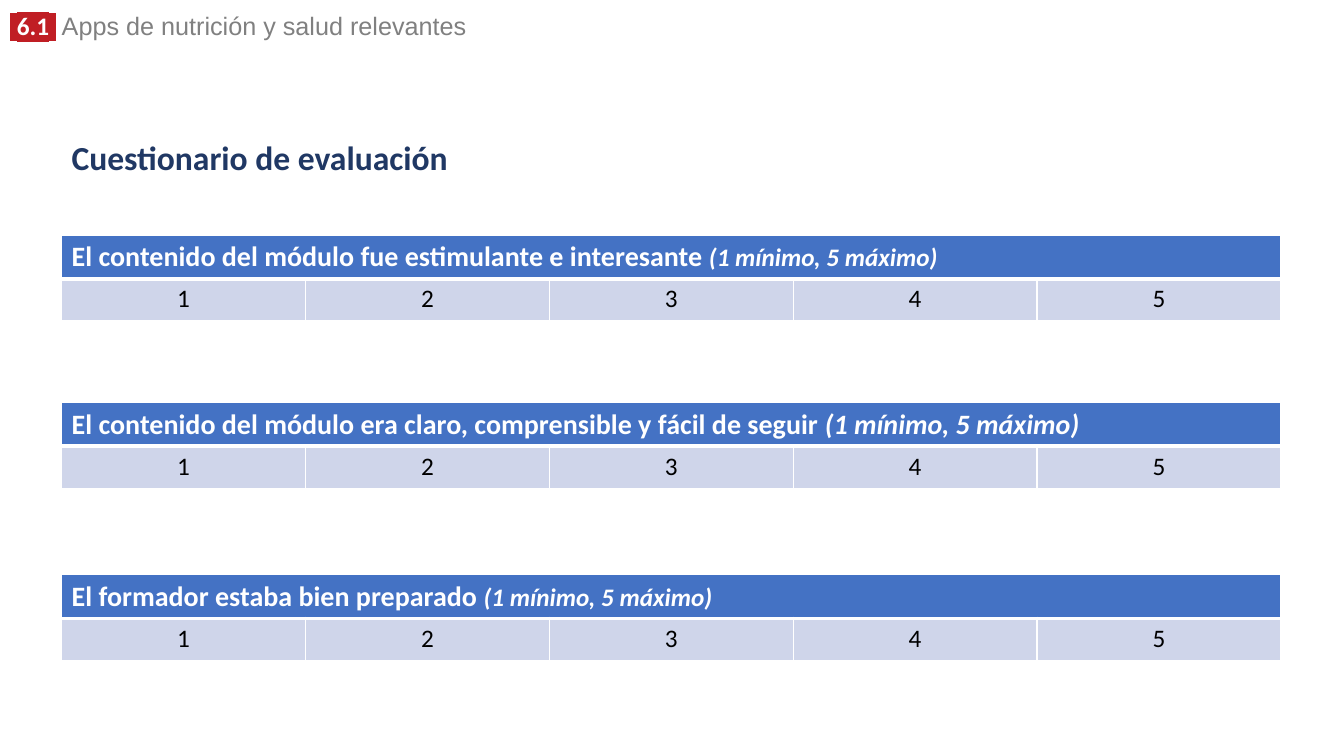
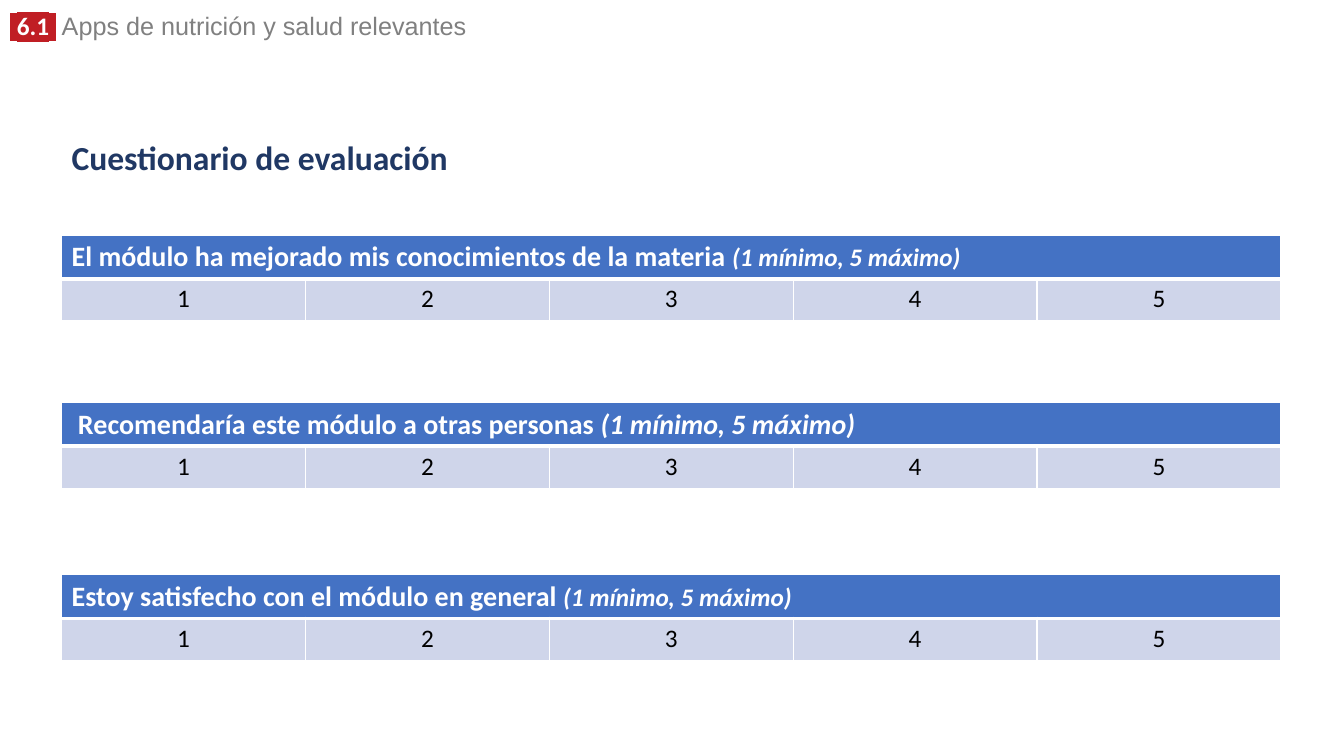
from lxml.etree import SubElement
from pptx import Presentation
from pptx.dml.color import RGBColor
from pptx.enum.text import MSO_ANCHOR, PP_ALIGN
from pptx.oxml import parse_xml
from pptx.oxml.ns import nsdecls, qn
from pptx.util import Pt

COLORS = {
    "white": "FFFFFF",
    "black": "000000",
    "badge": "C01E24",
    "module": "808080",
    "title": "203864",
    "question": "4472C4",
    "score": "CFD5EA",
}
LEFT, WIDTH, ROW_HEIGHT = 44, 871, 30
QUESTION_TOPS = (168, 287.5, 410.5)
SCORES = range(1, 6)
SCALE = "(1 mínimo, 5 máximo)"
QUESTIONNAIRE = [
    [
        ("El contenido del módulo fue estimulante e interesante ", 18),
        ("El contenido del módulo era claro, comprensible y fácil de seguir ", 20),
        ("El formador estaba bien preparado ", 18),
    ],
    [
        ("El módulo ha mejorado mis conocimientos de la materia ", 18),
        (" Recomendaría este módulo a otras personas ", 20),
        ("Estoy satisfecho con el módulo en general ", 18),
    ],
]


def set_font(font, size, color, name="Calibri", bold=False):
    font.size = Pt(size)
    font.name = name
    font.bold = bold
    font.color.rgb = RGBColor.from_string(COLORS[color])


def highlight(run, color):
    mark = parse_xml(
        f'<a:highlight {nsdecls("a")}><a:srgbClr val="{COLORS[color]}"/></a:highlight>'
    )
    run.font.fill._xPr.find(qn("a:solidFill")).addnext(mark)


def add_text(slide, left, top, width, height, spacing):
    frame = slide.shapes.add_textbox(Pt(left), Pt(top), Pt(width), Pt(height)).text_frame
    frame.word_wrap = True
    paragraph = frame.paragraphs[0]
    paragraph.line_spacing = spacing
    return frame, paragraph


def add_module_header(slide):
    _, header = add_text(slide, 0, 8, 685, 25, 0.8)
    for text, name in ((" ", "Arial"), ("6.1", "Calibri"), (" ", "Arial")):
        badge = header.add_run()
        badge.text = text
        set_font(badge.font, 18, "white", name, bold=True)
        highlight(badge, "badge")
    module = header.add_run()
    module.text = " Apps de nutrición y salud relevantes"
    set_font(module.font, 18, "module", "Arial")


def add_title(slide, text):
    frame, title = add_text(slide, LEFT, 85, WIDTH, 57.5, 0.9)
    frame.vertical_anchor = MSO_ANCHOR.MIDDLE
    title.text = text
    set_font(title.font, 24, "title", bold=True)


def style_cell(cell, fill, top, bottom):
    borders = cell._tc.get_or_add_tcPr()
    for side, weight in (("L", 1), ("R", 1), ("T", top), ("B", bottom)):
        line = SubElement(borders, qn(f"a:ln{side}"), w=str(Pt(weight)))
        SubElement(SubElement(line, qn("a:solidFill")), qn("a:srgbClr"), val=COLORS["white"])
    cell.fill.solid()
    cell.fill.fore_color.rgb = RGBColor.from_string(COLORS[fill])


def add_question(slide, top, question, scale_size):
    table = slide.shapes.add_table(
        2, len(SCORES), Pt(LEFT), Pt(top), Pt(WIDTH), Pt(2 * ROW_HEIGHT)
    ).table
    table.horz_banding = False
    for column, score in enumerate(SCORES):
        style_cell(table.cell(0, column), "question", 1, 3)
        answer = table.cell(1, column)
        style_cell(answer, "score", 3, 1)
        label = answer.text_frame.paragraphs[0]
        label.text = str(score)
        label.alignment = PP_ALIGN.CENTER
        set_font(label.font, 18, "black")

    heading = table.cell(0, 0)
    heading.merge(table.cell(0, len(SCORES) - 1))
    prompt = heading.text_frame.paragraphs[0]
    for text, size, italic in ((question, 20, False), (SCALE, scale_size, True)):
        run = prompt.add_run()
        run.text = text
        set_font(run.font, size, "white", bold=True)
        run.font.italic = italic


def main():
    deck = Presentation()
    deck.slide_width, deck.slide_height = Pt(960), Pt(540)
    for questions in QUESTIONNAIRE:
        slide = deck.slides.add_slide(deck.slide_layouts[6])
        add_module_header(slide)
        add_title(slide, "Cuestionario de evaluación")
        for top, (question, scale_size) in zip(QUESTION_TOPS, questions):
            add_question(slide, top, question, scale_size)
    deck.save("out.pptx")


if __name__ == "__main__":
    main()
